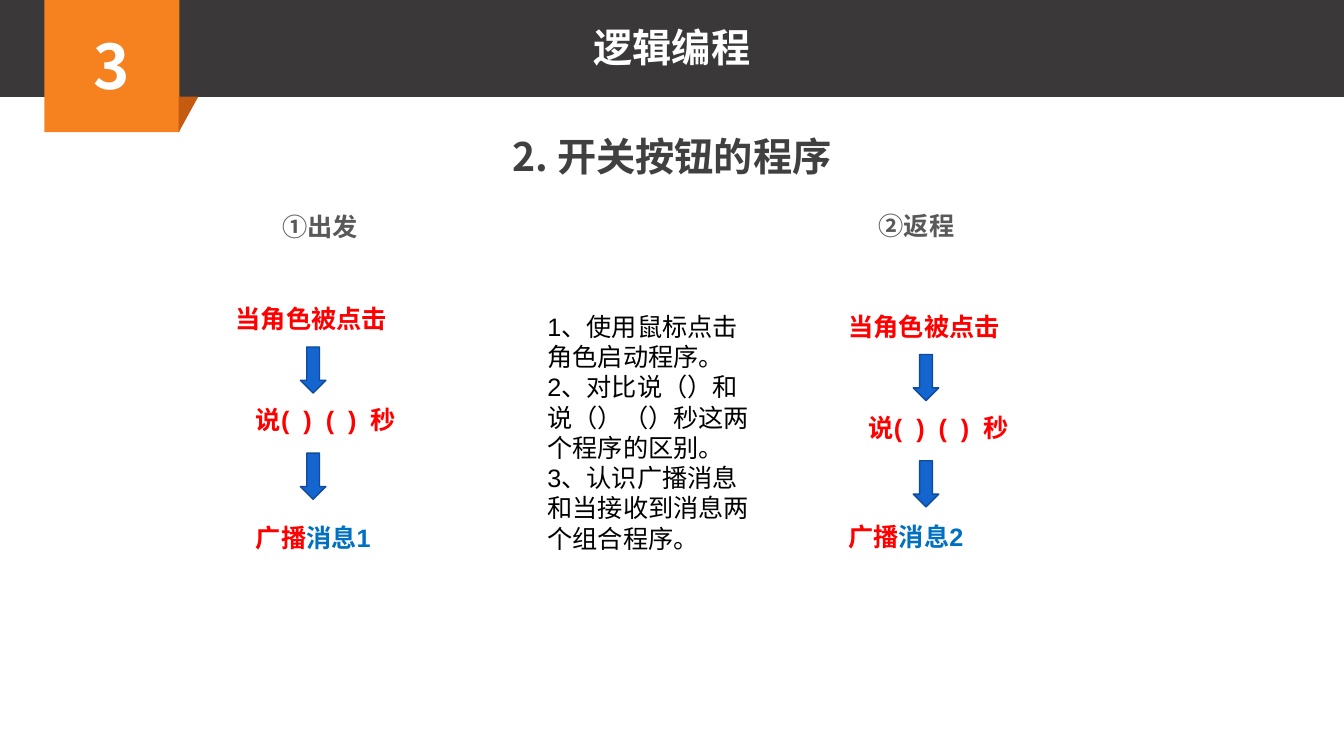
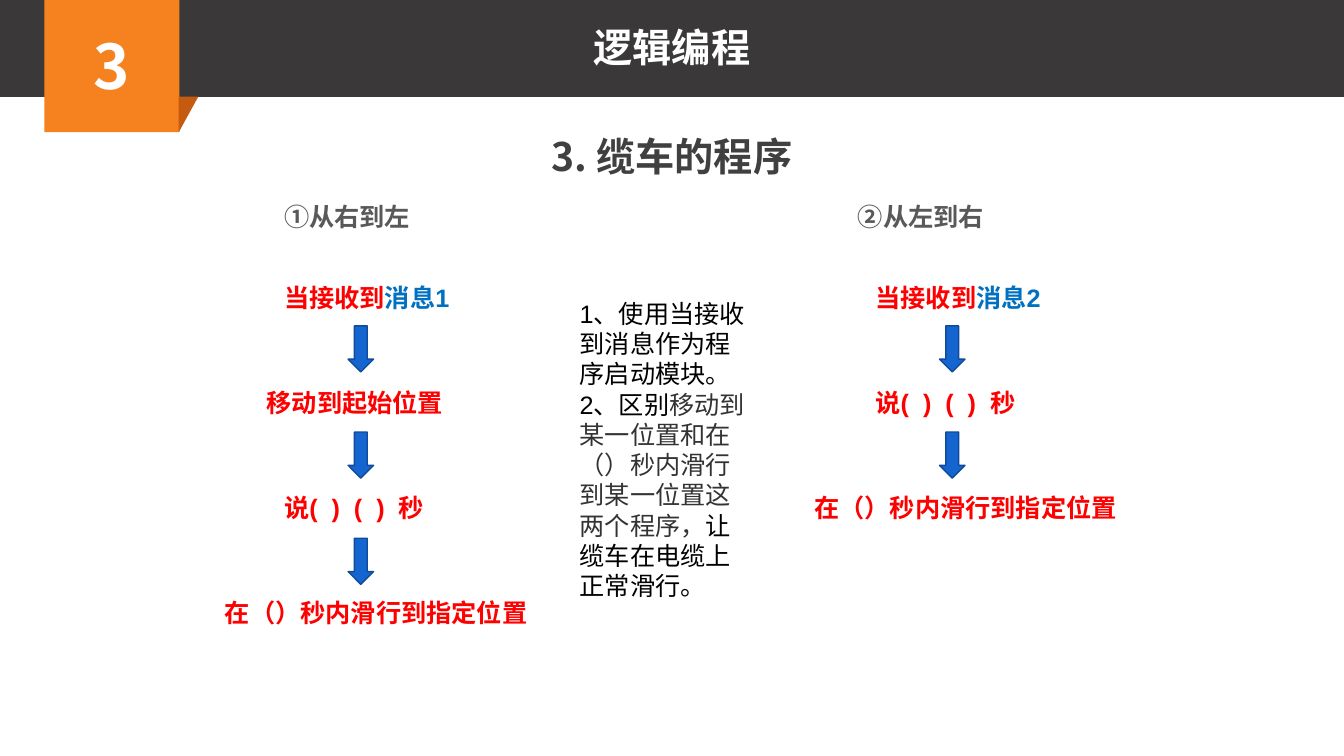
from lxml.etree import SubElement
from pptx import Presentation
from pptx.dml.color import RGBColor
from pptx.enum.lang import MSO_LANGUAGE_ID as Lang
from pptx.enum.shapes import MSO_SHAPE as Shape
from pptx.enum.text import MSO_ANCHOR as Anchor, PP_ALIGN as Align
from pptx.oxml.ns import qn
from pptx.util import Inches, Pt

HEADING_FONT, BODY_FONT = "Noto Sans CJK SC", "Arial"
WHITE, BLACK, BAND, ORANGE, FOLD = "FFFFFF", "000000", "3A3838", "F5821F", "C55A11"
SUBTITLE, HEADING, DETAIL = "404040", "595959", "333333"
RED, BLUE, ARROW, ARROW_EDGE = "FF0000", "0070C0", "1465CF", "0F4B99"
LINE_HEIGHT, STEP_WIDTH = 5.3, 28
SAY = [("说(  )  (  )  秒", RED)]
GLIDE = [("在（）秒内滑行到指定位置", RED)]
CLICK = [("当角色被点击", RED)]


def color(code):
    return RGBColor.from_string(code)


class Lesson:
    """Lesson deck whose lengths are percentages of the slide's width and height."""

    def __init__(self):
        self.deck = Presentation()
        self.deck.slide_width, self.deck.slide_height = Inches(13.33), Inches(7.5)
        self.slide = None

    def place(self, left, top, width, height):
        across, down = self.deck.slide_width / 100, self.deck.slide_height / 100
        return [round(n) for n in (left * across, top * down, width * across, height * down)]

    def fill_text(self, frame, paragraphs, size, font=BODY_FONT, bold=True, align=Align.LEFT):
        frame.word_wrap = True
        for index, pieces in enumerate(paragraphs):
            paragraph = frame.add_paragraph() if index else frame.paragraphs[0]
            paragraph.alignment = align
            for words, tint in pieces:
                run = paragraph.add_run()
                run.text = words
                run.font.size, run.font.bold, run.font.name = Pt(size), bold, font
                run.font.color.rgb = color(tint)
                run.font.language_id = Lang.SIMPLIFIED_CHINESE
                SubElement(run.font._element, qn("a:ea"), typeface=font)

    def text(self, box, paragraphs, size=18, **style):
        frame = self.slide.shapes.add_textbox(*self.place(*box)).text_frame
        self.fill_text(frame, paragraphs, size, **style)

    def shape(self, kind, box, fill, edge=None):
        shape = self.slide.shapes.add_shape(kind, *self.place(*box))
        shape.shadow.inherit = False
        shape.fill.solid()
        shape.fill.fore_color.rgb = color(fill)
        if edge:
            shape.line.color.rgb, shape.line.width = color(edge), Pt(1)
        else:
            shape.line.fill.background()
        return shape

    def page(self, subtitle):
        self.slide = self.deck.slides.add_slide(self.deck.slide_layouts[6])
        self.shape(Shape.RECTANGLE, (0, -0.4, 100, 13.2), BAND)
        badge = self.shape(Shape.RECTANGLE, (3.3, -0.4, 10.05, 17.9), ORANGE)
        badge.text_frame.vertical_anchor = Anchor.MIDDLE
        centred = {"font": HEADING_FONT, "align": Align.CENTER}
        self.fill_text(badge.text_frame, [[("3", WHITE)]], 44, **centred)
        fold = self.shape(Shape.RIGHT_TRIANGLE, (13.3, 12.8, 1.45, 4.7), FOLD)
        fold._element.spPr.xfrm.set("flipV", "1")
        self.text((33.6, 2.4, 32.8, 7.6), [[("逻辑编程", WHITE)]], 28, **centred)
        self.text((27.7, 16.8, 44.6, 7.6), [[(subtitle, SUBTITLE)]], 28, **centred)

    def heading(self, left, top, words):
        box = (left, top, STEP_WIDTH, LINE_HEIGHT)
        self.text(box, [[(words, HEADING)]], font=HEADING_FONT)

    def flow(self, arrow_left, steps):
        first_arrow = steps[0][1] + 6.4
        for index, (left, top, pieces) in enumerate(steps):
            self.text((left, top, STEP_WIDTH, LINE_HEIGHT), [pieces])
            if index < len(steps) - 1:
                box = (arrow_left, first_arrow + 14.05 * index, 1.9, 6.1)
                self.shape(Shape.DOWN_ARROW, box, ARROW, ARROW_EDGE)

    def notes(self, box, paragraphs):
        self.text(box, paragraphs, bold=False)


def broadcast(number):
    return [("广播", RED), (f"消息{number}", BLUE)]


def receive(number):
    return [("当接收到", RED), (f"消息{number}", BLUE)]


def switch_page(lesson):
    lesson.page("2. 开关按钮的程序")
    lesson.heading(20.25, 27.3, "①出发")
    lesson.heading(64.65, 27.2, "②返程")
    lesson.flow(22.35, [(16.8, 39.5, CLICK), (18.3, 52.8, SAY), (18.3, 68.4, broadcast(1))])
    lesson.flow(67.95, [(62.4, 40.5, CLICK), (63.9, 53.9, SAY), (62.4, 68.3, broadcast(2))])
    lesson.notes((40, 40.5, 16.6, 33.6), [
        [("1、使用鼠标点击角色启动程序。", BLACK)],
        [("2、对比说（）和说（）（）秒这两个程序的区别。", BLACK)],
        [("3、认识广播消息和当接收到消息两个组合程序。", BLACK)],
    ])


def cable_car_page(lesson):
    lesson.page("3. 缆车的程序")
    lesson.heading(20.4, 26, "①从右到左")
    lesson.heading(63.1, 26, "②从左到右")
    rows = [36.7 + 13.87 * index for index in range(4)]
    outward = [(20.4, receive(1)), (19.1, [("移动到起始位置", RED)]), (20.4, SAY), (16, GLIDE)]
    homeward = [(64.4, receive(2)), (64.4, SAY), (59.85, GLIDE)]
    for arrow_left, steps in ((25.9, outward), (69.9, homeward)):
        lesson.flow(arrow_left, [(left, top, words) for top, (left, words) in zip(rows, steps)])
    lesson.notes((42.4, 38.8, 14.4, 41.7), [
        [("1、使用当接收到消息作为程序启动模块。", BLACK)],
        [("2、区别", BLACK),
         ("移动到某一位置和在（）秒内滑行到某一位置这两个程序，", DETAIL),
         ("让缆车在电缆上正常滑行。", BLACK)],
    ])


def main():
    lesson = Lesson()
    switch_page(lesson)
    cable_car_page(lesson)
    lesson.deck.save("out.pptx")


if __name__ == "__main__":
    main()
